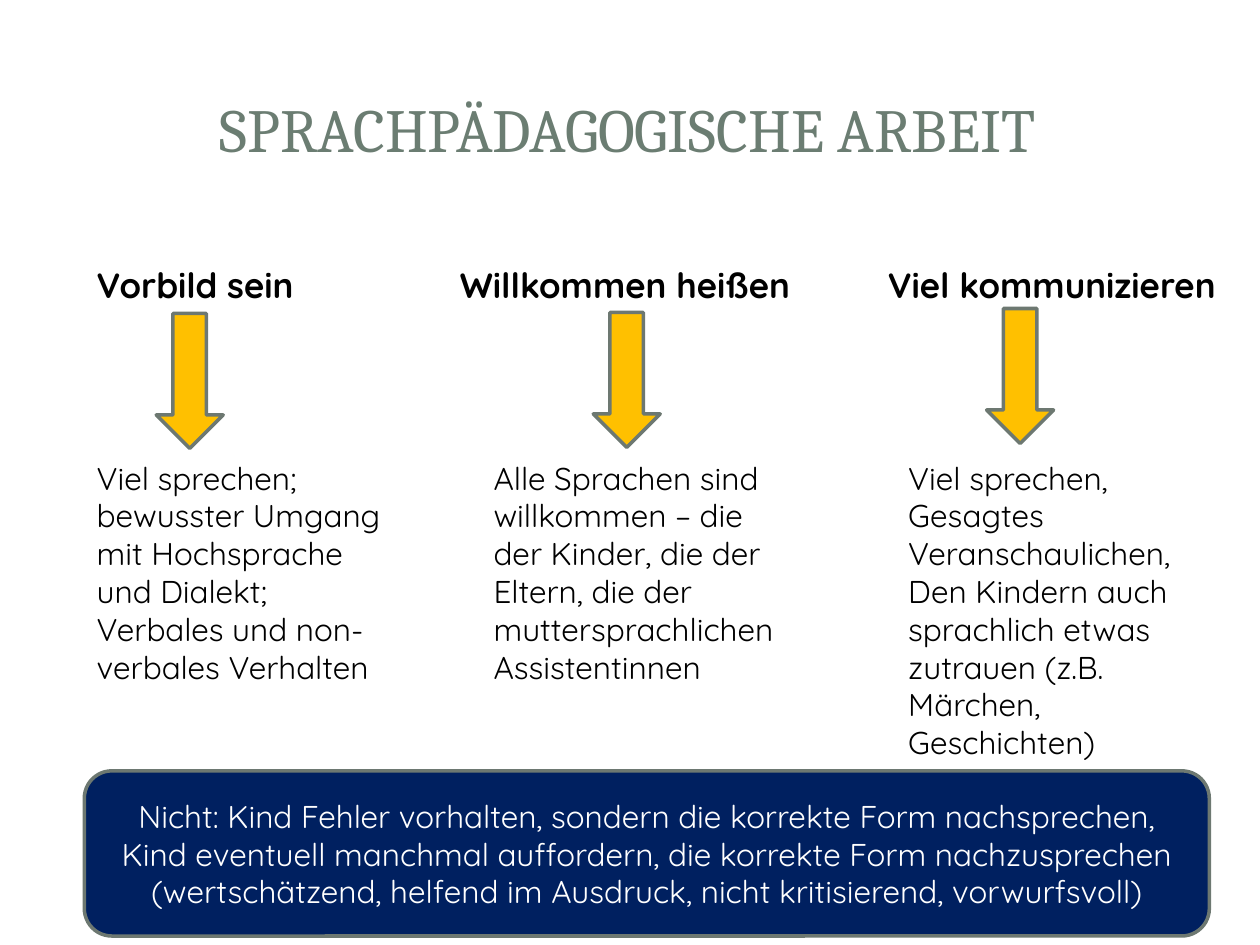
from pptx import Presentation
from pptx.dml.color import RGBColor
from pptx.enum.shapes import MSO_SHAPE
from pptx.enum.text import MSO_ANCHOR, MSO_AUTO_SIZE, PP_ALIGN
from pptx.util import Cm, Pt

TITLE_FONT = {"name": "Cambria", "size": Pt(35), "bold": False}
HEADING_FONT = {"name": "Quicksand", "size": Pt(20), "bold": True}
BODY_FONT = {"name": "Quicksand", "size": Pt(18), "bold": False}
OPEN_FRAME = {"word_wrap": False, "auto_size": MSO_AUTO_SIZE.SHAPE_TO_FIT_TEXT}
CENTRED_FRAME = {
    "word_wrap": True,
    "auto_size": MSO_AUTO_SIZE.NONE,
    "vertical_anchor": MSO_ANCHOR.MIDDLE,
}

HEADING_TOP, HEADING_HEIGHT = 5.18, 1.11
BODY_TOP, LINE_HEIGHT, BODY_PADDING = 9.12, 0.76, 0.3
ARROW_WIDTH, ARROW_HEIGHT = 1.35, 2.72

COLUMNS = [
    {
        "heading": ("Vorbild sein", 1.7, 4.52),
        "arrow": (3.15, 6.32),
        "body": ([
            "Viel sprechen;",
            "bewusster Umgang",
            "mit Hochsprache",
            "und Dialekt;",
            "Verbales und non-",
            "verbales Verhalten",
        ], 1.7, 6.68),
    },
    {
        "heading": ("Willkommen heißen", 9.02, 7.32),
        "arrow": (11.96, 6.3),
        "body": ([
            "Alle Sprachen sind",
            "willkommen – die",
            "der Kinder, die der",
            "Eltern, die der",
            "muttersprachlichen",
            "Assistentinnen",
        ], 9.7, 6.55),
    },
    {
        "heading": ("Viel kommunizieren", 17.65, 7.29),
        "arrow": (19.89, 6.22),
        "body": ([
            "Viel sprechen,",
            "Gesagtes",
            "Veranschaulichen,",
            "Den Kindern auch",
            "sprachlich etwas",
            "zutrauen (z.B.",
            "Märchen,",
            "Geschichten)",
        ], 18.06, 6.32),
    },
]
ADVICE = (
    "Nicht: Kind Fehler vorhalten, sondern die korrekte Form nachsprechen, "
    "Kind eventuell manchmal auffordern, die korrekte Form nachzusprechen "
    "(wertschätzend, helfend im Ausdruck, nicht kritisierend, vorwurfsvoll)"
)


def colour(hex_value):
    return RGBColor.from_string(hex_value)


def apply_format(target, values):
    for attribute, value in values.items():
        setattr(target, attribute, value)


def write_lines(frame, lines, font, hex_value, alignment, frame_format):
    apply_format(frame, frame_format)
    for index, line in enumerate(lines):
        paragraph = frame.add_paragraph() if index else frame.paragraphs[0]
        paragraph.alignment = alignment
        run = paragraph.add_run()
        run.text = line
        apply_format(run.font, font)
        run.font.color.rgb = colour(hex_value)


def add_title(slide, wording):
    title = slide.shapes.title
    apply_format(title, {
        "left": Cm(1.19), "top": Cm(1.14), "width": Cm(22.94), "height": Cm(2.9),
    })
    write_lines(title.text_frame, [wording], TITLE_FONT, "6B7D72",
                PP_ALIGN.CENTER, CENTRED_FRAME)


def add_text(slide, lines, left, top, width, height, font):
    box = slide.shapes.add_textbox(Cm(left), Cm(top), Cm(width), Cm(height))
    write_lines(box.text_frame, lines, font, "000000", PP_ALIGN.LEFT, OPEN_FRAME)


def add_outlined_shape(slide, preset, left, top, width, height, fill):
    outlined = slide.shapes.add_shape(preset, Cm(left), Cm(top), Cm(width), Cm(height))
    outlined.shadow.inherit = False
    outlined.fill.solid()
    outlined.fill.fore_color.rgb = colour(fill)
    outlined.line.color.rgb = colour("6D7871")
    outlined.line.width = Pt(2)
    return outlined


def add_column(slide, column):
    heading, heading_left, heading_width = column["heading"]
    add_text(slide, [heading], heading_left, HEADING_TOP, heading_width,
             HEADING_HEIGHT, HEADING_FONT)
    body, body_left, body_width = column["body"]
    body_height = len(body) * LINE_HEIGHT + BODY_PADDING
    add_text(slide, body, body_left, BODY_TOP, body_width, body_height, BODY_FONT)
    add_outlined_shape(slide, MSO_SHAPE.DOWN_ARROW, *column["arrow"],
                       ARROW_WIDTH, ARROW_HEIGHT, "FFC000")


def add_advice(slide, wording):
    panel = add_outlined_shape(slide, MSO_SHAPE.ROUNDED_RECTANGLE,
                               1.7, 15.54, 22.68, 3.33, "002060")
    write_lines(panel.text_frame, [wording], BODY_FONT, "FFFFFF",
                PP_ALIGN.CENTER, CENTRED_FRAME)


def main():
    presentation = Presentation()
    apply_format(presentation, {"slide_width": Cm(25.4), "slide_height": Cm(19.05)})
    slide = presentation.slides.add_slide(presentation.slide_layouts[5])
    add_title(slide, "SPRACHPÄDAGOGISCHE ARBEIT")
    for column in COLUMNS:
        add_column(slide, column)
    add_advice(slide, ADVICE)
    presentation.save("out.pptx")


if __name__ == "__main__":
    main()
